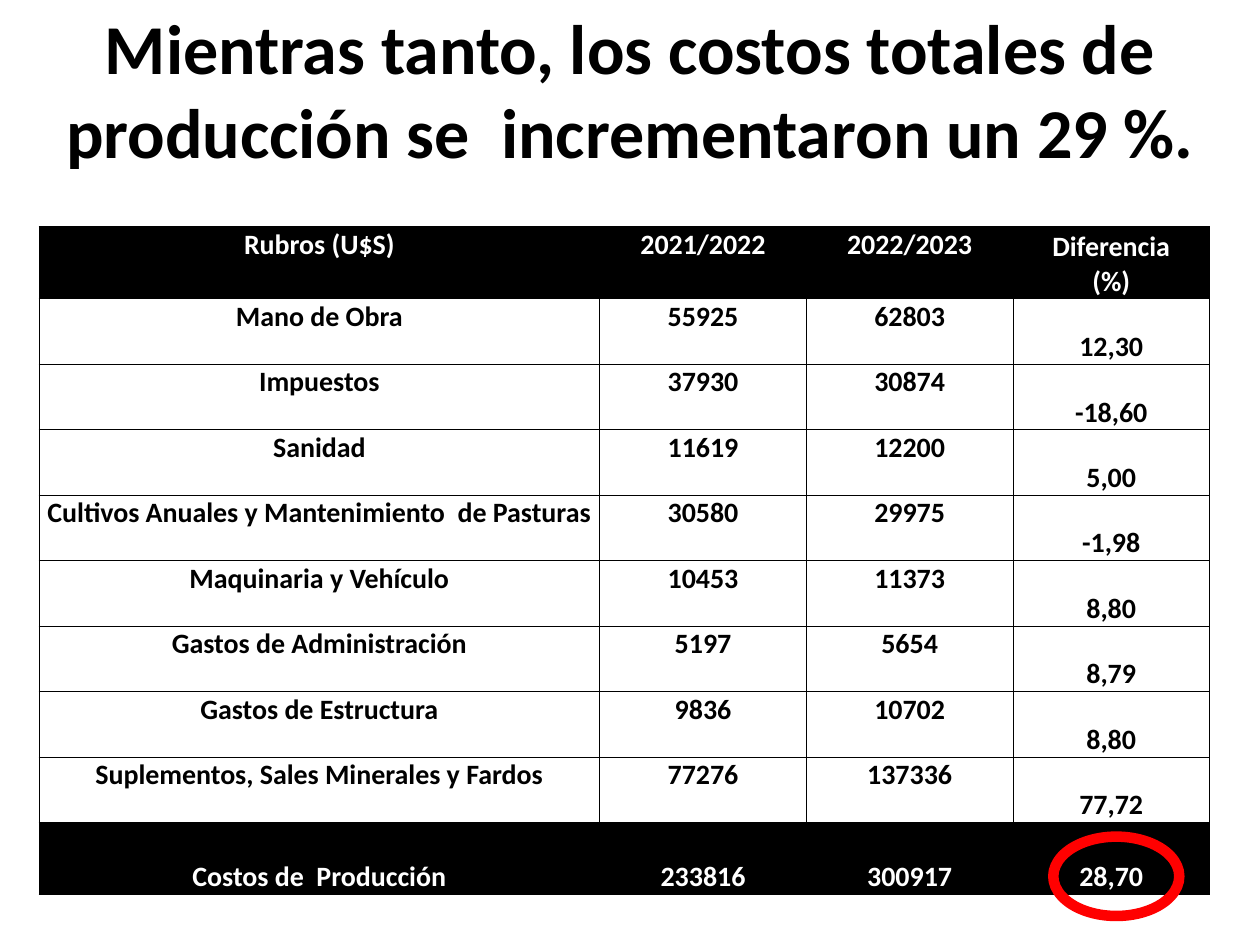
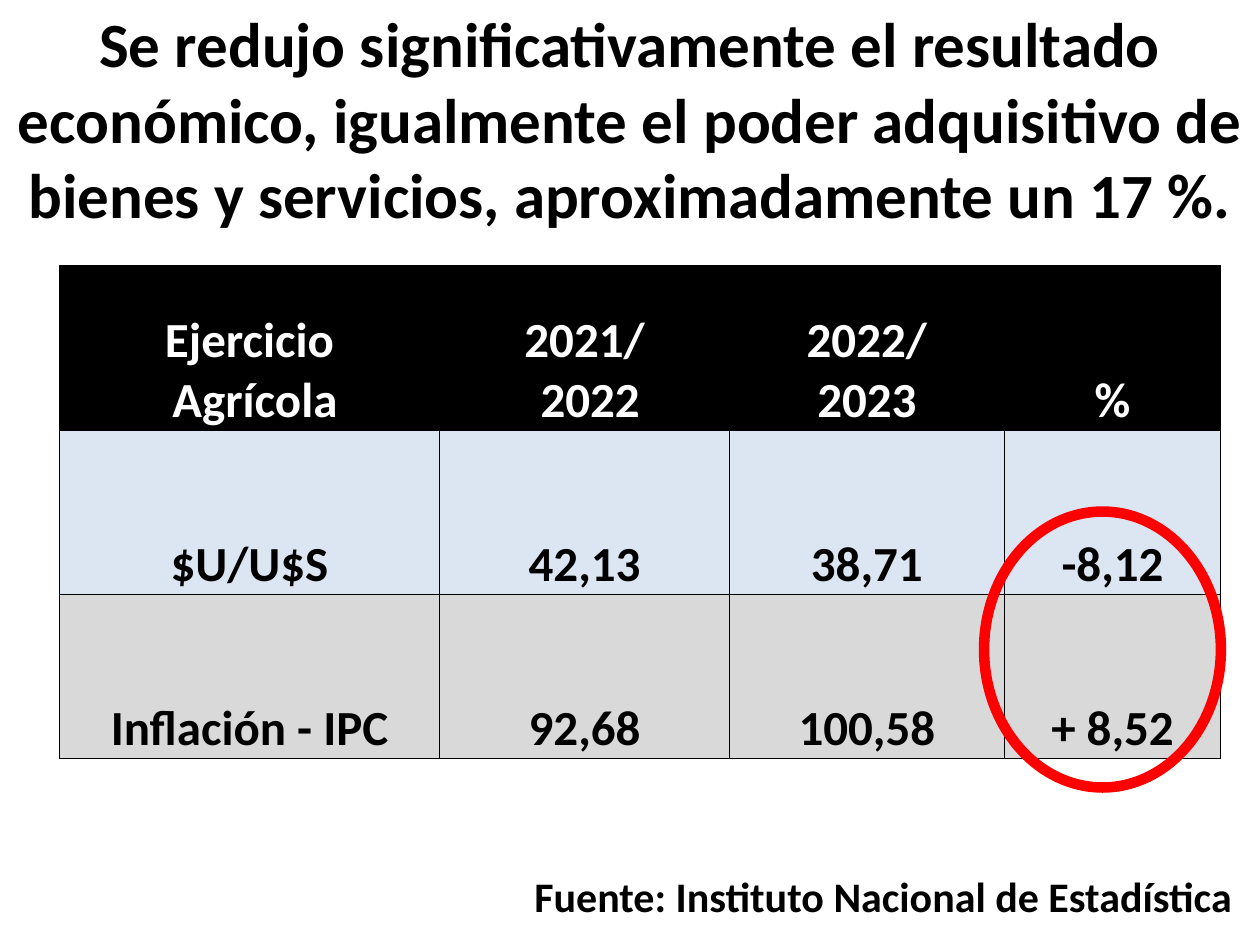
from dataclasses import dataclass

from lxml.etree import SubElement
from pptx import Presentation
from pptx.dml.color import RGBColor
from pptx.enum.shapes import MSO_SHAPE
from pptx.enum.text import MSO_ANCHOR, MSO_AUTO_SIZE, PP_ALIGN
from pptx.oxml.ns import qn
from pptx.slide import Slide
from pptx.table import _Cell
from pptx.text.text import TextFrame
from pptx.util import Pt

EMU_PER_PX = 9144  # 100 px to the inch
SLIDE_WIDTH, SLIDE_HEIGHT = 1000, 750
TITLE_ONLY_LAYOUT = 5

FONT = "Calibri"
BLACK = RGBColor(0x00, 0x00, 0x00)
WHITE = RGBColor(0xFF, 0xFF, 0xFF)
RED = RGBColor(0xFF, 0x00, 0x00)
PALE_BLUE = RGBColor(0xDC, 0xE6, 0xF2)
PALE_GREY = RGBColor(0xD9, 0xD9, 0xD9)


@dataclass(frozen=True)
class Box:
    left: int
    top: int
    width: int
    height: int

    def emu(self) -> tuple[int, ...]:
        return tuple(map(px, (self.left, self.top, self.width, self.height)))


@dataclass(frozen=True)
class Row:
    texts: tuple[str, ...]
    height: int
    fill: RGBColor = WHITE
    color: RGBColor = BLACK
    anchor: MSO_ANCHOR = MSO_ANCHOR.BOTTOM


@dataclass(frozen=True)
class TableSpec:
    left: int
    top: int
    column_widths: tuple[int, ...]
    font_size: int
    rows: tuple[Row, ...]

    def box(self) -> Box:
        return Box(self.left, self.top, sum(self.column_widths),
                   sum(row.height for row in self.rows))


COSTS = (
    ("Mano de Obra", "55925", "62803", "12,30"),
    ("Impuestos", "37930", "30874", "-18,60"),
    ("Sanidad", "11619", "12200", "5,00"),
    ("Cultivos Anuales y Mantenimiento  de Pasturas", "30580", "29975", "-1,98"),
    ("Maquinaria y Vehículo", "10453", "11373", "8,80"),
    ("Gastos de Administración", "5197", "5654", "8,79"),
    ("Gastos de Estructura", "9836", "10702", "8,80"),
    ("Suplementos, Sales Minerales y Fardos", "77276", "137336", "77,72"),
)

COST_TABLE = TableSpec(
    31, 180, (445, 164, 164, 156), 16,
    (
        Row(("Rubros (U$S)", "2021/2022", "2022/2023", "Diferencia\n(%)"),
            57, BLACK, WHITE, MSO_ANCHOR.TOP),
        *(Row(cost, 52, anchor=MSO_ANCHOR.TOP) for cost in COSTS),
        Row(("Costos de  Producción", "233816", "300917", "28,70"), 57, BLACK, WHITE),
    ),
)

PURCHASING_POWER_TABLE = TableSpec(
    47, 211, (302, 230, 218, 172), 28,
    (
        Row(("Ejercicio\n Agrícola", "2021/\n 2022", "2022/\n2023", "%"), 131, BLACK, WHITE),
        Row(("$U/U$S", "42,13", "38,71", "-8,12"), 130, PALE_BLUE),
        Row(("Inflación - IPC", "92,68", "100,58", "+ 8,52"), 130, PALE_GREY),
    ),
)


def px(length: int) -> int:
    return length * EMU_PER_PX


def write_text(frame: TextFrame, text: str, size: int, color: RGBColor = BLACK,
               alignment: PP_ALIGN = PP_ALIGN.CENTER) -> None:
    frame.text = text
    frame.word_wrap = True
    for paragraph in frame.paragraphs:
        paragraph.alignment = alignment
        font = paragraph.font
        font.name, font.size, font.bold = FONT, Pt(size), True
        font.color.rgb = color


def add_titled_slide(presentation: Presentation, title: str, height: int, size: int) -> Slide:
    slide = presentation.slides.add_slide(presentation.slide_layouts[TITLE_ONLY_LAYOUT])
    shape = slide.shapes.title
    shape.left, shape.top, shape.width, shape.height = Box(0, 0, SLIDE_WIDTH, height).emu()
    write_text(shape.text_frame, title, size)
    shape.text_frame.auto_size = MSO_AUTO_SIZE.NONE
    shape.text_frame.vertical_anchor = MSO_ANCHOR.MIDDLE
    return slide


def add_borders(cell: _Cell) -> None:
    """Add thin black borders; call before filling, as the schema puts lines first."""
    properties = cell._tc.get_or_add_tcPr()
    for side in ("a:lnL", "a:lnR", "a:lnT", "a:lnB"):
        line = SubElement(properties, qn(side), w=str(Pt(0.5)))
        fill = SubElement(line, qn("a:solidFill"))
        SubElement(fill, qn("a:srgbClr"), val=str(BLACK))


def add_data_table(slide: Slide, spec: TableSpec) -> None:
    """Draw the table; its last column always sits at the bottom of the row."""
    table = slide.shapes.add_table(
        len(spec.rows), len(spec.column_widths), *spec.box().emu()).table
    table.first_row = table.horz_banding = False
    for column, width in zip(table.columns, spec.column_widths):
        column.width = px(width)
    last_column = len(spec.column_widths) - 1
    for row_index, row in enumerate(spec.rows):
        table.rows[row_index].height = px(row.height)
        for column_index, text in enumerate(row.texts):
            cell = table.cell(row_index, column_index)
            cell.margin_left = cell.margin_right = cell.margin_top = px(1)
            cell.margin_bottom = 0
            cell.vertical_anchor = (
                MSO_ANCHOR.BOTTOM if column_index == last_column else row.anchor)
            add_borders(cell)
            cell.fill.solid()
            cell.fill.fore_color.rgb = row.fill
            write_text(cell.text_frame, text, spec.font_size, row.color)


def add_highlight(slide: Slide, box: Box) -> None:
    ellipse = slide.shapes.add_shape(MSO_SHAPE.OVAL, *box.emu())
    ellipse.shadow.inherit = False
    ellipse.fill.background()
    ellipse.line.color.rgb = RED
    ellipse.line.width = Pt(6)


def add_source_note(slide: Slide, box: Box, text: str) -> None:
    frame = slide.shapes.add_textbox(*box.emu()).text_frame
    write_text(frame, text, 24, alignment=PP_ALIGN.RIGHT)
    frame.margin_right = px(22)


def add_costs_slide(presentation: Presentation) -> None:
    slide = add_titled_slide(
        presentation,
        "Mientras tanto, los costos totales de producción se  incrementaron un 29 %.",
        141, 40)
    add_data_table(slide, COST_TABLE)
    add_highlight(slide, Box(836, 664, 100, 63))


def add_purchasing_power_slide(presentation: Presentation) -> None:
    slide = add_titled_slide(
        presentation,
        "Se redujo significativamente el resultado económico, igualmente el poder "
        "adquisitivo de bienes y servicios, aproximadamente un 17 %.",
        187, 36)
    add_source_note(slide, Box(320, 686, 680, 50),
                    "Fuente: Instituto Nacional de Estadística")
    add_data_table(slide, PURCHASING_POWER_TABLE)
    add_highlight(slide, Box(781, 406, 188, 219))


def main() -> None:
    presentation = Presentation()
    presentation.slide_width = px(SLIDE_WIDTH)
    presentation.slide_height = px(SLIDE_HEIGHT)
    add_costs_slide(presentation)
    add_purchasing_power_slide(presentation)
    presentation.save("out.pptx")


if __name__ == "__main__":
    main()
